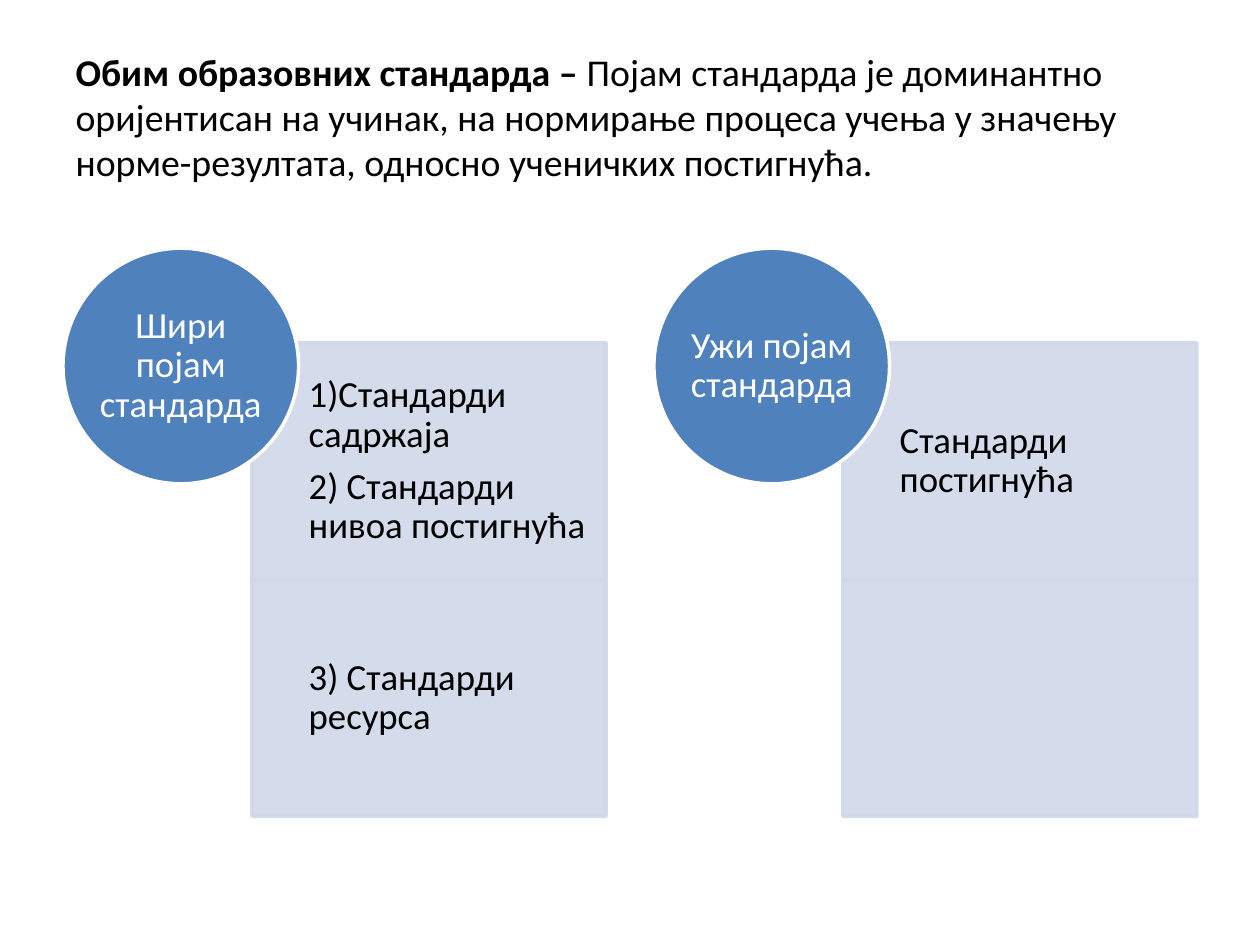
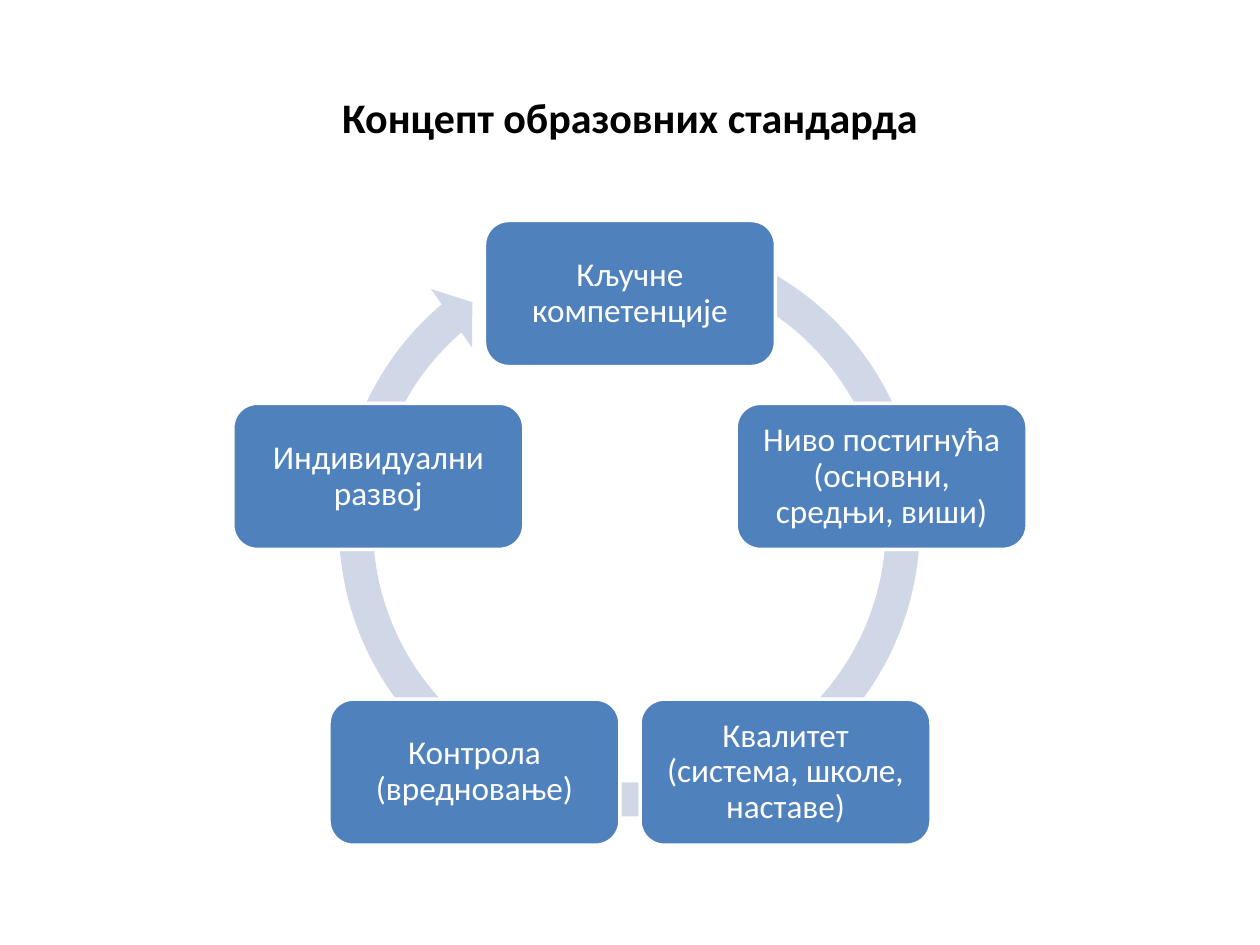
from math import cos, radians, sin

from lxml.etree import SubElement
from pptx import Presentation
from pptx.dml.color import RGBColor
from pptx.enum.shapes import MSO_SHAPE
from pptx.enum.text import MSO_ANCHOR, MSO_AUTO_SIZE, PP_ALIGN
from pptx.oxml.ns import qn
from pptx.util import Emu, Pt

EMU_PER_PX = 9144
FONT = "Calibri"
COLORS = {"ink": "000000", "white": "FFFFFF", "accent": "4F81BD", "tint": "D0D8E8"}


def px(length):
    return Emu(round(length * EMU_PER_PX))


def color(name):
    return RGBColor.from_string(COLORS[name])


def write(frame, paragraphs, size, ink="ink", align=PP_ALIGN.LEFT,
          insets=(10, 5, 10, 5), spacing=1.0, after=0):
    frame.word_wrap = True
    frame.auto_size = MSO_AUTO_SIZE.NONE
    frame.vertical_anchor = MSO_ANCHOR.MIDDLE
    frame.margin_left, frame.margin_top, frame.margin_right, frame.margin_bottom = map(px, insets)
    for index, runs in enumerate(paragraphs):
        paragraph = frame.add_paragraph() if index else frame.paragraphs[0]
        paragraph.alignment = align
        paragraph.line_spacing = spacing
        paragraph.space_after = Pt(after)
        for words, bold in runs:
            run = paragraph.add_run()
            run.text = words
            run.font.name = FONT
            run.font.size = Pt(size)
            run.font.bold = bold
            run.font.color.rgb = color(ink)


class Deck:
    """Holds the shared style and the slide being built."""

    def __init__(self):
        self.presentation = Presentation()
        self.presentation.slide_width = px(1000)
        self.presentation.slide_height = px(750)
        self.slide = None

    def add_slide(self, heading, size, align):
        self.slide = self.presentation.slides.add_slide(self.presentation.slide_layouts[5])
        title = self.slide.shapes.title
        title.left, title.top, title.width, title.height = map(px, (50, 30, 900, 125))
        write(title.text_frame, [heading], size, align=align)

    def add_shape(self, kind, box, fill, line=None, opacity=None):
        shape = self.slide.shapes.add_shape(kind, *map(px, box))
        shape.shadow.inherit = False
        shape.fill.solid()
        shape.fill.fore_color.rgb = color(fill)
        if line:
            shape.line.color.rgb = color(line)
            shape.line.width = Pt(2)
        else:
            shape.line.fill.background()
        if opacity:
            for tone in shape._element.spPr.iter(qn("a:srgbClr")):
                SubElement(tone, qn("a:alpha"), val=str(opacity * 1000))
        return shape

    def add_panel(self, box, items):
        panel = self.add_shape(MSO_SHAPE.RECTANGLE, box, "tint", "tint", opacity=90)
        if items:
            write(panel.text_frame, [[(item, False)] for item in items], 21,
                  insets=(45, 16, 16, 16), spacing=0.9, after=7)

    def add_label(self, kind, box, label, size, inset):
        node = self.add_shape(kind, box, "accent", "white")
        write(node.text_frame, [[(label, False)]], size, "white", PP_ALIGN.CENTER,
              insets=(inset,) * 4, spacing=0.9)


def build_scope(deck):
    deck.add_slide([
        ("Обим образовних стандарда – ", True),
        ("Појам стандарда је доминантно оријентисан на учинак, на нормирање процеса "
         "учења у значењу норме-резултата, односно ученичких постигнућа.", False),
    ], 21.6, PP_ALIGN.LEFT)
    concepts = [
        ("Шири појам стандарда", [
            ["1)Стандарди садржаја", "2) Стандарди нивоа постигнућа"],
            ["3) Стандарди ресурса"],
        ]),
        ("Ужи појам стандарда", [["Стандарди постигнућа"], []]),
    ]
    panel_height = 188
    for column, (concept, panels) in enumerate(concepts):
        left = 50 + 469 * column
        for row, items in enumerate(panels):
            deck.add_panel((left + 150, 272 + panel_height * row, 281, panel_height), items)
        deck.add_label(MSO_SHAPE.OVAL, (left, 197, 187, 187), concept, 21, 0)


def build_cycle(deck):
    deck.add_slide([("Концепт образовних стандарда", True)], 24, PP_ALIGN.CENTER)
    cycle = deck.add_shape(MSO_SHAPE.CIRCULAR_ARROW, (254, 172, 491, 491), "tint")
    for index, value in enumerate((0.055, 3.307, 137.657, 173.922, 0.058)):
        cycle.adjustments[index] = value
    stages = [
        "Кључне компетенције",
        "Ниво постигнућа (основни, средњи, виши)",
        "Квалитет (система, школе, наставе)",
        "Контрола (вредновање)",
        "Индивидуални развој",
    ]
    center_x, center_y, radius = 500, 443, 210
    width, height = 231, 116
    for index, stage in enumerate(stages):
        angle = radians(360 / len(stages) * index)
        left = center_x + radius * sin(angle) - width / 2
        top = center_y - radius * cos(angle) - height / 2
        deck.add_label(MSO_SHAPE.ROUNDED_RECTANGLE, (left, top, width, height), stage, 19, 8)


def main():
    deck = Deck()
    build_scope(deck)
    build_cycle(deck)
    deck.presentation.save("out.pptx")


if __name__ == "__main__":
    main()
